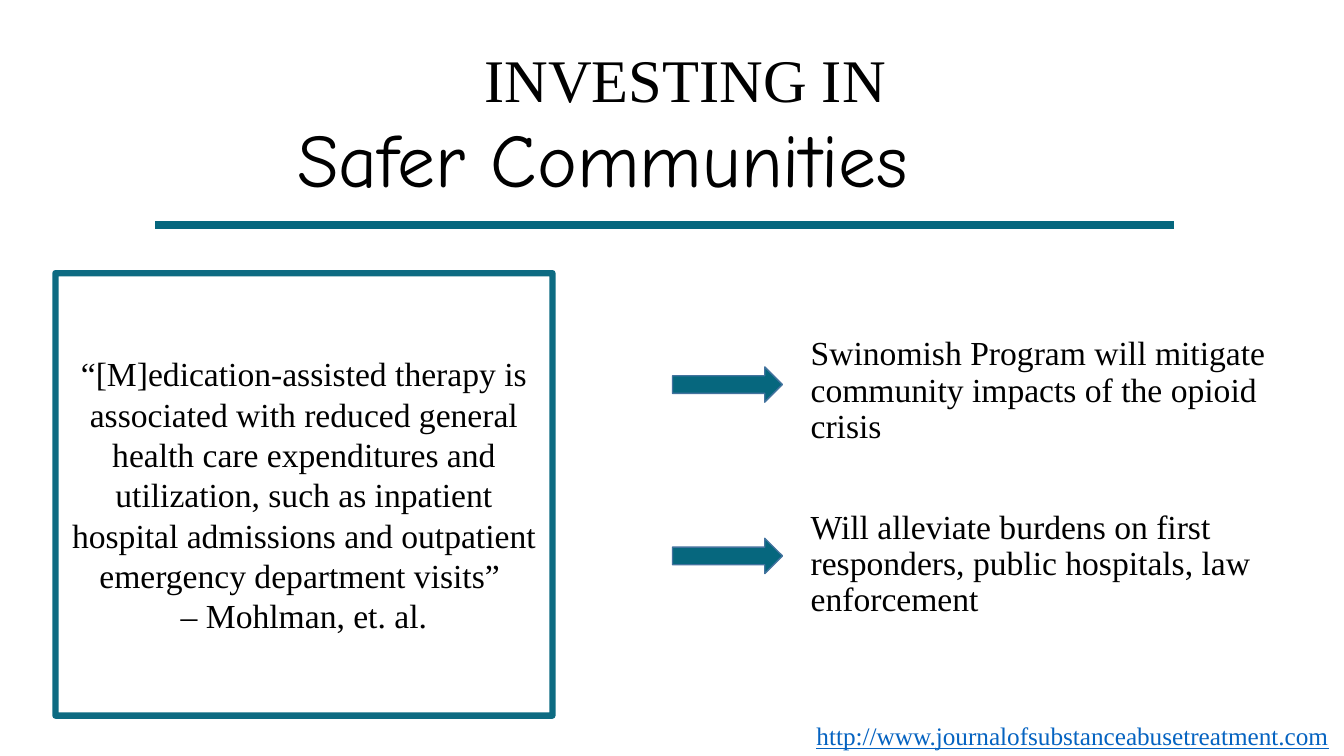
from lxml import etree
from pptx import Presentation
from pptx.dml.color import RGBColor
from pptx.enum.shapes import MSO_CONNECTOR as Link, MSO_SHAPE as Shape
from pptx.enum.text import MSO_ANCHOR as Anchor, MSO_AUTO_SIZE as Fit, PP_ALIGN as Align
from pptx.oxml.ns import qn
from pptx.util import Inches, Pt

# Content
TITLE = "INVESTING IN "
SUBTITLE = "Safer Communities"
QUOTE = [
    "“[M]edication-assisted therapy is associated with reduced general health care "
    "expenditures and utilization, such as inpatient hospital admissions and "
    "outpatient emergency department visits” ",
    "– Mohlman, et. al.",
]
POINTS = [
    "Swinomish Program will mitigate community impacts of the opioid crisis",
    "Will alleviate burdens on first responders, public hospitals, law enforcement",
]
SOURCE = "http://www.journalofsubstanceabusetreatment.com"

# Style
TEAL = RGBColor(0x06, 0x67, 0x7E)
EDGE = RGBColor(0x43, 0x73, 0x9E)
BLUE = RGBColor(0x05, 0x63, 0xC1)
BLACK = RGBColor(0, 0, 0)
WHITE = RGBColor(0xFF, 0xFF, 0xFF)
SERIF, HAND = "Times New Roman", "Comic Neue"
ARROW_TOP, ARROW_STEP = 3.64, 1.7


def place(shape, box):
    for name, value in zip(("left", "top", "width", "height"), box):
        setattr(shape, name, Inches(value))


def write(shape, lines, size, font=SERIF, color=BLACK, para=None, **frame):
    text = shape.text_frame
    for name, value in {"word_wrap": True, "auto_size": Fit.NONE, **frame}.items():
        setattr(text, name, value)
    text.text = "\n".join(lines)
    for item in text.paragraphs:
        for name, value in (para or {}).items():
            setattr(item, name, value)
        for run in item.runs:
            run.font.name = font
            run.font.size = Pt(size)
            run.font.color.rgb = color
    return text.paragraphs


def draw(slide, kind, box, fill, edge, width):
    shape = slide.shapes.add_shape(kind, *map(Inches, box))
    shape.shadow.inherit = False
    shape.fill.solid()
    shape.fill.fore_color.rgb = fill
    shape.line.color.rgb = edge
    shape.line.width = Pt(width)
    return shape


def main():
    deck = Presentation()
    deck.slide_width, deck.slide_height = Inches(13.33), Inches(7.5)
    slide = deck.slides.add_slide(deck.slide_layouts[1])
    shapes = slide.shapes

    # Title
    title, body = slide.placeholders
    place(title, (1.67, 0.42, 10.4, 0.8))
    write(title, [TITLE], 43.2, vertical_anchor=Anchor.MIDDLE,
          para={"alignment": Align.CENTER, "line_spacing": 0.9})

    # Points
    place(body, (7.94, 3.15, 5.31, 3.04))
    points = write(body, POINTS, 24, vertical_anchor=Anchor.BOTTOM,
                   para={"line_spacing": 0.9, "space_before": Pt(0)})
    points[1].space_before = Pt(46)
    for point in points:
        props = point._p.get_or_add_pPr()
        props.set("marL", "0")
        props.set("indent", "0")
        etree.SubElement(props, qn("a:buNone"))

    # Rule under the heading
    rule = shapes.add_connector(Link.STRAIGHT, *map(Inches, (1.54, 2.23, 11.64, 2.23)))
    rule.line.color.rgb = TEAL
    rule.line.width = Pt(6)
    etree.SubElement(rule._element.spPr, qn("a:effectLst"))

    # Source address
    box = shapes.add_textbox(*map(Inches, (8, 7.1, 5.33, 0.4)))
    address = write(box, [SOURCE], 18, color=BLUE, word_wrap=False)
    address[0].runs[0].font.underline = True

    # Quote
    quote = draw(slide, Shape.RECTANGLE, (0.55, 2.71, 4.93, 4.39), WHITE, TEAL, 4.5)
    write(quote, QUOTE, 24, vertical_anchor=Anchor.MIDDLE, para={"alignment": Align.CENTER})
    tint = quote.line._ln.find(".//" + qn("a:srgbClr"))
    etree.SubElement(tint, qn("a:alpha"), val="97000")

    # Subtitle
    box = shapes.add_textbox(*map(Inches, (2.85, 1.06, 8.26, 1.01)))
    write(box, [SUBTITLE], 54, font=HAND)

    # One arrow per point
    for row in range(len(POINTS)):
        top = ARROW_TOP + row * ARROW_STEP
        draw(slide, Shape.RIGHT_ARROW, (6.67, top, 1.09, 0.35), TEAL, EDGE, 1)

    deck.save("out.pptx")


if __name__ == "__main__":
    main()
